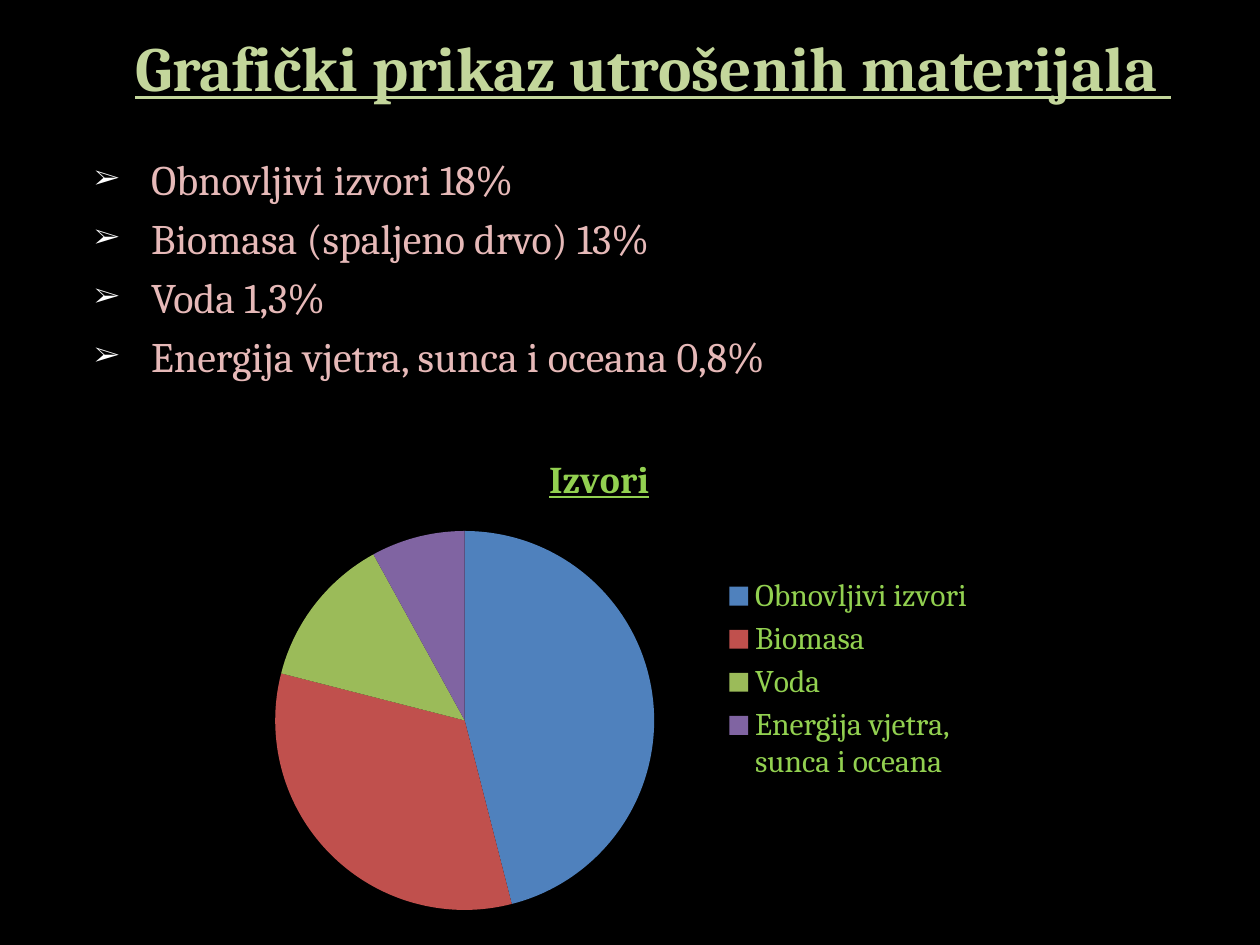
from lxml.etree import SubElement
from pptx import Presentation
from pptx.chart.data import CategoryChartData
from pptx.dml.color import RGBColor
from pptx.enum.chart import XL_CHART_TYPE, XL_LEGEND_POSITION
from pptx.enum.text import PP_ALIGN
from pptx.oxml.ns import qn
from pptx.util import Inches, Pt

SHARES = ["Obnovljivi izvori 18%", "Biomasa (spaljeno drvo) 13%", "Voda 1,3%",
          "Energija vjetra, sunca i oceana 0,8%"]
SOURCES = {
    "Obnovljivi izvori": (46, "4F81BD"),
    "Biomasa": (33, "C0504D"),
    "Voda": (13, "9BBB59"),
    "Energija vjetra, sunca i oceana": (8, "8064A2"),
}


def paint(fill, color):
    fill.solid()
    fill.fore_color.rgb = RGBColor.from_string(color)


def style(font, size, color, bold=False, underline=False):
    font.name = "Cambria"
    font.size = Pt(size)
    font.bold = bold
    font.underline = underline
    paint(font.fill, color)


def place(shape, box):
    shape.left, shape.top, shape.width, shape.height = map(Inches, box)


def add_arrow_bullet(paragraph):
    properties = paragraph._p.get_or_add_pPr()
    properties.set("marL", str(Inches(0.6)))
    properties.set("indent", str(-Inches(0.45)))
    color = SubElement(properties, qn("a:buClr"))
    SubElement(color, qn("a:srgbClr"), val="FFFFFF")
    SubElement(properties, qn("a:buSzPct"), val="65000")
    SubElement(properties, qn("a:buFont"), typeface="Cambria")
    SubElement(properties, qn("a:buChar"), char="➢")


def fill_heading(heading, box):
    place(heading, box)
    heading.text_frame.text = "Grafički prikaz utrošenih materijala "
    heading.text_frame.word_wrap = False
    paragraph = heading.text_frame.paragraphs[0]
    paragraph.alignment = PP_ALIGN.CENTER
    style(paragraph.runs[0].font, 36, "C3D69B", bold=True, underline=True)


def fill_shares(shares, box):
    place(shares, box)
    shares.text_frame.text = "\n".join(SHARES)
    for paragraph in shares.text_frame.paragraphs:
        add_arrow_bullet(paragraph)
        style(paragraph.runs[0].font, 24, "E6B9B8")


def add_sources_pie(slide, box):
    data = CategoryChartData()
    data.categories = list(SOURCES)
    data.add_series("Izvori", [value for value, _ in SOURCES.values()])
    chart = slide.shapes.add_chart(XL_CHART_TYPE.PIE, *map(Inches, box), data).chart
    style(chart.font, 18, "D8D0C8")

    chart.has_title = True
    chart.chart_title.include_in_layout = False
    caption = chart.chart_title.text_frame
    caption.text = "Izvori"
    style(caption.paragraphs[0].runs[0].font, 21.6, "92D050", bold=True, underline=True)

    chart.has_legend = True
    chart.legend.position = XL_LEGEND_POSITION.RIGHT
    chart.legend.include_in_layout = False
    style(chart.legend.font, 18, "92D050")

    pie = chart.plots[0]
    pie.vary_by_categories = True
    for index, (_, color) in enumerate(SOURCES.values()):
        paint(pie.series[0].points[index].format.fill, color)


def main():
    presentation = Presentation()
    presentation.slide_width, presentation.slide_height = Inches(10), Inches(7.5)
    slide = presentation.slides.add_slide(
        presentation.slide_layouts.get_by_name("Title and Content"))
    paint(slide.background.fill, "000000")
    fill_heading(slide.shapes.title, (0.85, 0.17, 8.67, 0.71))
    fill_shares(slide.placeholders[1], (0.5, 1.17, 9, 5.15))
    add_sources_pie(slide, (1.67, 3.42, 6.17, 3.94))
    presentation.save("out.pptx")


if __name__ == "__main__":
    main()
